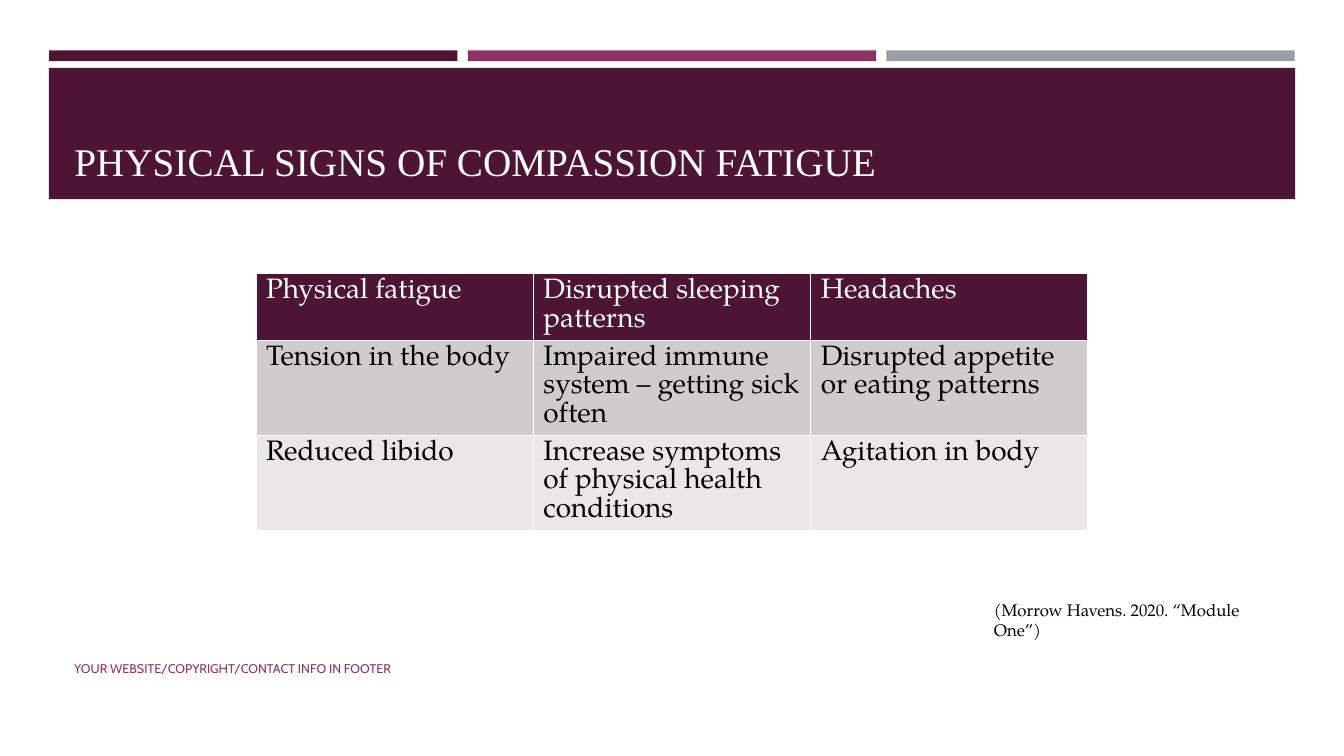
from dataclasses import dataclass

from lxml.etree import SubElement
from pptx import Presentation
from pptx.dml.color import RGBColor
from pptx.enum.shapes import MSO_SHAPE
from pptx.enum.text import MSO_ANCHOR, MSO_AUTO_SIZE, PP_ALIGN
from pptx.oxml.ns import qn
from pptx.util import Cm, Pt

HEADING = "PHYSICAL SIGNS OF COMPASSION FATIGUE"
SIGNS = [
    ("Physical fatigue", "Disrupted sleeping patterns", "Headaches"),
    ("Tension in the body", "Impaired immune system – getting sick often",
     "Disrupted appetite or eating patterns"),
    ("Reduced libido", "Increase symptoms of physical health conditions",
     "Agitation in body"),
]
CITATION = "(Morrow Havens. 2020. “Module One”)"
FOOTER = "YOUR WEBSITE/COPYRIGHT/CONTACT INFO IN FOOTER"


@dataclass(frozen=True)
class Theme:
    plum: str = "4D1434"
    berry: str = "903163"
    slate: str = "969FA7"
    white: str = "FFFFFF"
    black: str = "000000"
    row_fills: tuple = ("4D1434", "D0CCCE", "E9E7E8")
    heading_font: str = "Times New Roman"
    body_font: str = "TeX Gyre Pagella"
    footer_font: str = "Cabin"
    heading_size: float = 28
    sign_size: float = 20
    sign_leading: float = 20.2
    citation_size: float = 12
    footer_size: float = 9
    border: float = 1


THEME = Theme()


def add_block(slide, color, left, top, width, height):
    block = slide.shapes.add_shape(
        MSO_SHAPE.RECTANGLE, Cm(left), Cm(top), Cm(width), Cm(height))
    block.shadow.inherit = False
    block.fill.solid()
    block.fill.fore_color.rgb = RGBColor.from_string(color)
    block.line.fill.background()


def write(frame, text, font_name, size, color):
    frame.word_wrap = True
    paragraph = frame.paragraphs[0]
    paragraph.text = text
    paragraph.alignment = PP_ALIGN.LEFT
    paragraph.font.name = font_name
    paragraph.font.size = Pt(size)
    paragraph.font.color.rgb = RGBColor.from_string(color)
    return paragraph


def add_note(slide, text, box, font_name, size, color):
    note = slide.shapes.add_textbox(*map(Cm, box))
    write(note.text_frame, text, font_name, size, color)
    return note.text_frame


def add_borders(cell):
    properties = cell._tc.get_or_add_tcPr()
    for side in ("lnL", "lnR", "lnT", "lnB"):
        line = SubElement(properties, qn(f"a:{side}"), w=str(Pt(THEME.border)))
        fill = SubElement(line, qn("a:solidFill"))
        SubElement(fill, qn("a:srgbClr"), val=THEME.white)


def add_banner(slide):
    bar_width, bar_step = 10.29, 10.55
    for index, color in enumerate((THEME.plum, THEME.berry, THEME.slate)):
        add_block(slide, color, 1.24 + index * bar_step, 1.27, bar_width, 0.27)
    add_block(slide, THEME.plum, 1.23, 1.71, 31.41, 3.31)

    heading = slide.shapes.title
    heading.left, heading.top, heading.width, heading.height = map(
        Cm, (1.62, 1.96, 30.63, 2.82))
    write(heading.text_frame, HEADING, THEME.heading_font,
          THEME.heading_size, THEME.white)
    heading.text_frame.vertical_anchor = MSO_ANCHOR.BOTTOM
    heading.text_frame.auto_size = MSO_AUTO_SIZE.NONE
    heading.element.getparent().append(heading.element)


def add_signs(slide):
    column_width, row_heights = 6.99, (1.66, 2.39, 2.39)
    columns = len(SIGNS[0])
    table = slide.shapes.add_table(
        len(SIGNS), columns, Cm(6.45), Cm(6.89),
        Cm(column_width * columns), Cm(sum(row_heights))).table
    for column in table.columns:
        column.width = Cm(column_width)
    for row_index, signs in enumerate(SIGNS):
        text_color = THEME.white if row_index == 0 else THEME.black
        table.rows[row_index].height = Cm(row_heights[row_index])
        for column_index, sign in enumerate(signs):
            cell = table.cell(row_index, column_index)
            paragraph = write(cell.text_frame, sign, THEME.body_font,
                              THEME.sign_size, text_color)
            paragraph.font.bold = False
            paragraph.line_spacing = Pt(THEME.sign_leading)
            add_borders(cell)
            cell.fill.solid()
            cell.fill.fore_color.rgb = RGBColor.from_string(
                THEME.row_fills[row_index])


def main():
    deck = Presentation()
    deck.slide_width, deck.slide_height = Cm(33.87), Cm(19.05)
    slide = deck.slides.add_slide(deck.slide_layouts[5])
    add_banner(slide)
    add_signs(slide)
    footer = add_note(slide, FOOTER, (1.62, 16.54, 19.2, 1.02),
                      THEME.footer_font, THEME.footer_size, THEME.berry)
    footer.vertical_anchor = MSO_ANCHOR.MIDDLE
    footer.margin_bottom = Cm(0.53)
    add_note(slide, CITATION, (24.8, 14.99, 7.77, 1.55),
             THEME.body_font, THEME.citation_size, THEME.black)
    deck.save("out.pptx")


if __name__ == "__main__":
    main()
